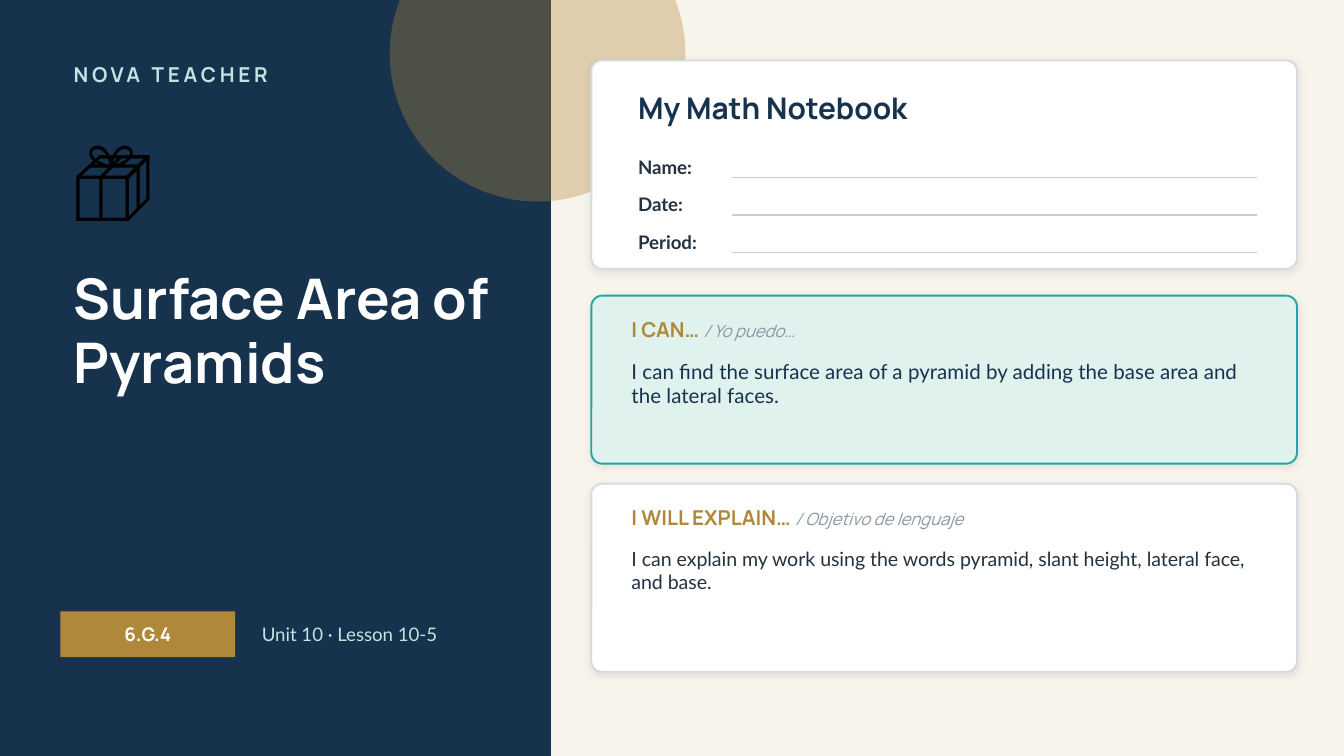
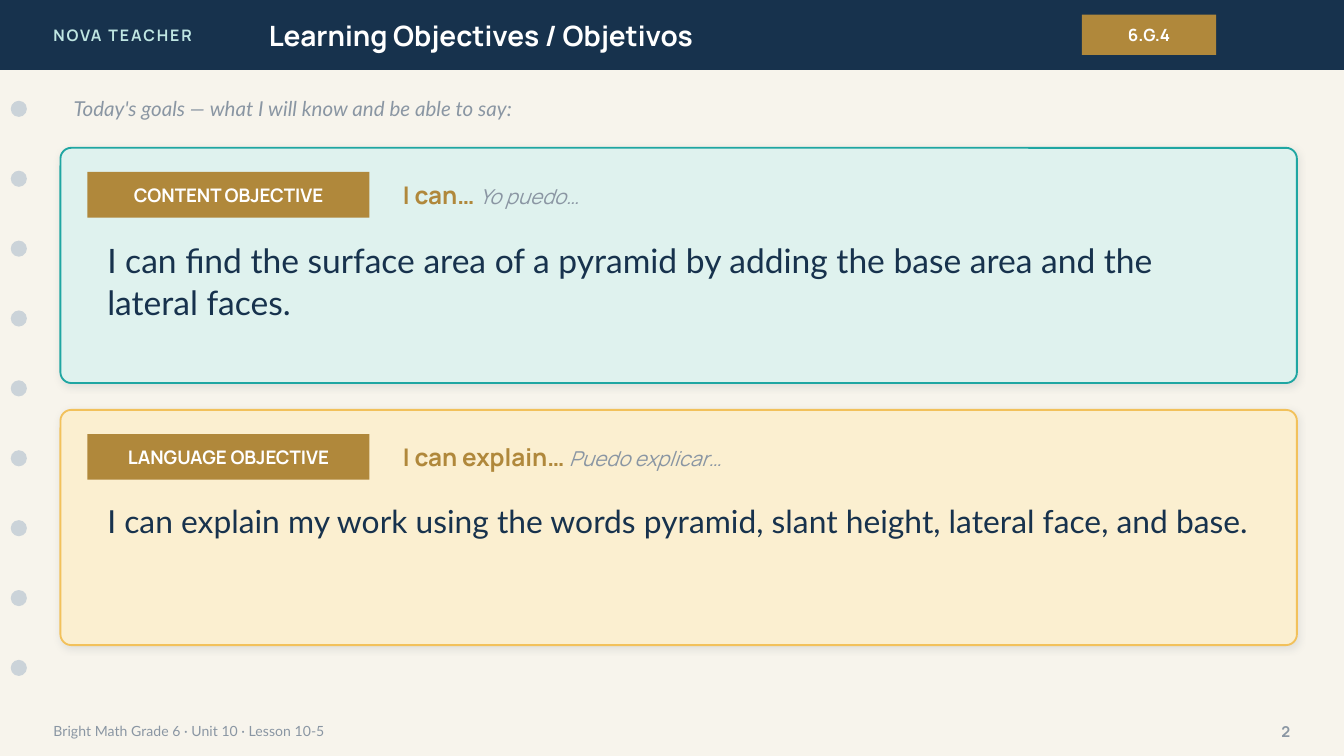
"""Build the cover and objectives slides of a lesson on pyramid surface area."""
from dataclasses import dataclass
from typing import NamedTuple

from lxml import etree
from pptx import Presentation
from pptx import util as u
from pptx.dml.color import RGBColor
from pptx.enum import shapes, text
from pptx.oxml.ns import qn

COLORS = {
    "navy": "17324D", "cream": "F7F4EC", "gold": "B0883B", "aqua": "BFE6E2",
    "white": "FFFFFF", "black": "000000", "ink": "24323F", "gray": "8A96A3",
    "border": "D6DBDF", "rule": "C7CDD2", "hole": "CBD3D9", "mint": "DFF2EE",
    "teal": "1FA6A2", "sand": "FBEFD0", "amber": "F2C15B", "shadow": "1C2E42",
}
HEAD, BODY = "Manrope", "Lato"
SHAPE = shapes.MSO_SHAPE
ANCHOR = text.MSO_ANCHOR
ALIGN = text.PP_ALIGN
WIDTH, HEIGHT = 720, 405
MARGIN = 32.4
BADGE_H = 24.48
BAND_H = 37.44
FOOTER_Y, FOOTER_H = 381.6, 20.16
BRAND = "NOVA TEACHER"
STANDARD = "6.G.4"
LESSON = "Unit 10 · Lesson 10-5"
CONTENT_GOAL = ("I can find the surface area of a pyramid by adding "
                "the base area and the lateral faces.")
LANGUAGE_GOAL = ("I can explain my work using the words pyramid, slant height, "
                 "lateral face, and base.")


class Box(NamedTuple):
    """Place and size in points."""
    x: float
    y: float
    w: float
    h: float

    def lengths(self) -> list:
        """Return the four values as lengths."""
        return [u.Pt(v) for v in self]


class Run(NamedTuple):
    """One stretch of text with its look."""
    text: str
    size: float
    color: str
    font: str = HEAD
    bold: bool = False
    italic: bool = False
    spacing: float = 0


@dataclass
class Goal:
    """A goal card with its prompt, translation and sentence."""
    y: float
    h: float
    fill: str
    line: str
    prompt: str
    translation: str
    sentence: str
    size: float
    color: str = "navy"
    badge: str = ""


def rgb(name: str) -> RGBColor:
    """Look up a named colour."""
    return RGBColor.from_string(COLORS[name])


def write(sp, runs: list[Run], anchor=ANCHOR.MIDDLE, align=ALIGN.LEFT,
          line_spacing: float | None = None) -> None:
    """Fill a shape with one paragraph of formatted runs."""
    tf = sp.text_frame
    tf.word_wrap = True
    tf.auto_size = text.MSO_AUTO_SIZE.NONE
    tf.vertical_anchor = anchor
    p = tf.paragraphs[0]
    p.alignment = align
    if line_spacing:
        p.line_spacing = line_spacing
    for run in runs:
        r = p.add_run()
        r.text = run.text
        r.font.name, r.font.size = run.font, u.Pt(run.size)
        r.font.bold, r.font.italic = run.bold, run.italic
        r.font.color.rgb = rgb(run.color)
        if run.spacing:
            r.font._element.set("spc", str(int(run.spacing * 100)))


def add_text(slide, box: Box, *runs: Run, **layout) -> None:
    """Add a text box."""
    write(slide.shapes.add_textbox(*box.lengths()), list(runs), **layout)


def add_title(slide, box: Box, run: Run, **layout) -> None:
    """Place the title placeholder above the shapes drawn so far."""
    sp = slide.shapes.title
    sp.left, sp.top, sp.width, sp.height = box.lengths()
    write(sp, [run], **layout)
    slide.shapes._spTree.append(sp._element)


def add_shape(slide, kind, box: Box, fill: str, line: str = ""):
    """Add a flat preset shape."""
    sp = slide.shapes.add_shape(kind, *box.lengths())
    sp.shadow.inherit = False
    sp.fill.solid()
    sp.fill.fore_color.rgb = rgb(fill)
    if line:
        sp.line.color.rgb = rgb(line)
        sp.line.width = u.Pt(1)
    else:
        sp.line.fill.background()
    return sp


def set_alpha(color, percent: int) -> None:
    """Give a colour element its opacity."""
    etree.SubElement(color, qn("a:alpha")).set("val", str(percent * 1000))


def add_card(slide, box: Box, fill: str, line: str) -> None:
    """Add a rounded card with a soft shadow."""
    sp = add_shape(slide, SHAPE.ROUNDED_RECTANGLE, box, fill, line)
    sp.adjustments[0] = 5.8 / box.h
    effects = sp._element.spPr.find(qn("a:effectLst"))
    shadow = etree.SubElement(effects, qn("a:outerShdw"), blurRad=str(u.Pt(4)),
                              dist=str(u.Pt(1)), dir="5400000", rotWithShape="0")
    color = etree.SubElement(shadow, qn("a:srgbClr"), val=COLORS["shadow"])
    set_alpha(color, 10)


def add_badge(slide, box: Box, label: str, size: float = 10) -> None:
    """Add a gold label."""
    sp = add_shape(slide, SHAPE.RECTANGLE, box, "gold")
    write(sp, [Run(label, size, "white", bold=True)], align=ALIGN.CENTER)


def add_rule(slide, x1: float, x2: float, y: float) -> None:
    """Add a thin writing line."""
    ends = [u.Pt(v) for v in (x1, y, x2, y)]
    sp = slide.shapes.add_connector(shapes.MSO_CONNECTOR.STRAIGHT, *ends)
    sp.line.color.rgb = rgb("rule")
    sp.line.width = u.Pt(0.75)
    etree.SubElement(sp._element.spPr, qn("a:effectLst"))


def add_prompt(slide, box: Box, goal: Goal, size: float) -> None:
    """Add a goal's prompt with its translation."""
    add_text(slide, box, Run(goal.prompt + " ", size, "gold", bold=True),
             Run(goal.translation, size - 2, "gray", italic=True))


def new_slide(prs):
    """Add a title-only slide on cream."""
    slide = prs.slides.add_slide(prs.slide_layouts[5])
    slide.background.fill.solid()
    slide.background.fill.fore_color.rgb = rgb("cream")
    return slide


def add_frame(slide, title: str, number: int) -> None:
    """Add the header band, binder holes and footer."""
    add_shape(slide, SHAPE.RECTANGLE, Box(0, 0, WIDTH, BAND_H), "navy")
    add_text(slide, Box(21.6, 0, 172.8, BAND_H),
             Run(BRAND, 8.5, "aqua", bold=True, spacing=1))
    add_title(slide, Box(136.8, 0, 403.2, BAND_H), Run(title, 15, "white", bold=True))
    add_badge(slide, Box(579.6, 7.92, 72, 21.6), STANDARD, 9)
    for i in range(9):
        add_shape(slide, SHAPE.OVAL, Box(5.76, 54 + i * BAND_H, 8.64, 8.64), "hole")
    add_text(slide, Box(21.6, FOOTER_Y, 504, FOOTER_H),
             Run(f"Bright Math Grade 6 · {LESSON}", 7.5, "gray", BODY))
    add_text(slide, Box(662.4, FOOTER_Y, 36, FOOTER_H),
             Run(str(number), 8, "gray", bold=True), align=ALIGN.RIGHT)


def build_cover(prs) -> None:
    """Build the notebook cover."""
    slide = new_slide(prs)
    add_shape(slide, SHAPE.RECTANGLE, Box(0, 0, 295.2, HEIGHT), "navy")
    circle = add_shape(slide, SHAPE.OVAL, Box(208.8, -50.4, 158.4, 158.4), "gold")
    set_alpha(circle._element.spPr.find(qn("a:solidFill"))[0], 35)
    add_text(slide, Box(MARGIN, 28.8, 237.6, 21.6),
             Run(BRAND, 11, "aqua", bold=True, spacing=2))
    add_text(slide, Box(MARGIN, 61.2, 108, 64.8), Run("📦", 44, "black", "Calibri"))
    add_title(slide, Box(MARGIN, 140.4, 237.6, 122.4),
              Run("Surface Area of Pyramids", 30, "white", bold=True),
              anchor=ANCHOR.TOP, line_spacing=0.95)
    add_badge(slide, Box(MARGIN, 327.6, 93.6, BADGE_H), STANDARD)
    add_text(slide, Box(133.2, 327.6, 151.2, BADGE_H), Run(LESSON, 10, "aqua", BODY))

    card_x, card_w = 316.8, 378
    add_card(slide, Box(card_x, MARGIN, card_w, 111.6), "white", "border")
    add_text(slide, Box(334.8, 43.2, 345.6, 28.8),
             Run("My Math Notebook", 16, "navy", bold=True))
    for i, label in enumerate(("Name:", "Date:", "Period:")):
        y = 80.64 + i * 20.16
        add_text(slide, Box(334.8, y, 57.6, 17.28), Run(label, 10, "ink", BODY, bold=True))
        add_rule(slide, 392.4, 673.2, y + 14.4)

    goals = [
        Goal(158.4, 90, "mint", "teal", "I CAN…", "/ Yo puedo…", CONTENT_GOAL, 11),
        Goal(259.2, 100.8, "white", "border", "I WILL EXPLAIN…",
             "/ Objetivo de lenguaje", LANGUAGE_GOAL, 10.5, "ink"),
    ]
    for goal in goals:
        add_card(slide, Box(card_x, goal.y, card_w, goal.h), goal.fill, goal.line)
        add_prompt(slide, Box(331.2, goal.y + 7.2, 349.2, 21.6), goal, 11)
        add_text(slide, Box(331.2, goal.y + 30.24, 349.2, goal.h - 34),
                 Run(goal.sentence, goal.size, goal.color, BODY), anchor=ANCHOR.TOP)


def build_objectives(prs) -> None:
    """Build the learning objectives slide."""
    slide = new_slide(prs)
    add_frame(slide, "Learning Objectives / Objetivos", len(prs.slides))
    add_text(slide, Box(MARGIN, 47.52, 662.4, 21.6),
             Run("Today's goals — what I will know and be able to say:", 11, "gray",
                 BODY, italic=True))
    goals = [
        Goal(79.2, 126, "mint", "teal", "I can…", "Yo puedo…", CONTENT_GOAL, 18,
             badge="CONTENT OBJECTIVE"),
        Goal(219.6, 126, "sand", "amber", "I can explain…", "Puedo explicar…",
             LANGUAGE_GOAL, 17, badge="LANGUAGE OBJECTIVE"),
    ]
    for goal in goals:
        add_card(slide, Box(MARGIN, goal.y, 662.4, goal.h), goal.fill, goal.line)
        add_badge(slide, Box(46.8, goal.y + 12.96, 151.2, BADGE_H), goal.badge)
        add_prompt(slide, Box(208.8, goal.y + 12.96, 475.2, BADGE_H), goal, 13)
        add_text(slide, Box(50.4, goal.y + 44.64, 626.4, 72),
                 Run(goal.sentence, goal.size, goal.color, BODY),
                 anchor=ANCHOR.TOP, line_spacing=1.05)


def main() -> None:
    """Build and save the presentation."""
    prs = Presentation()
    prs.slide_width, prs.slide_height = u.Pt(WIDTH), u.Pt(HEIGHT)
    build_cover(prs)
    build_objectives(prs)
    prs.save("out.pptx")


if __name__ == "__main__":
    main()
